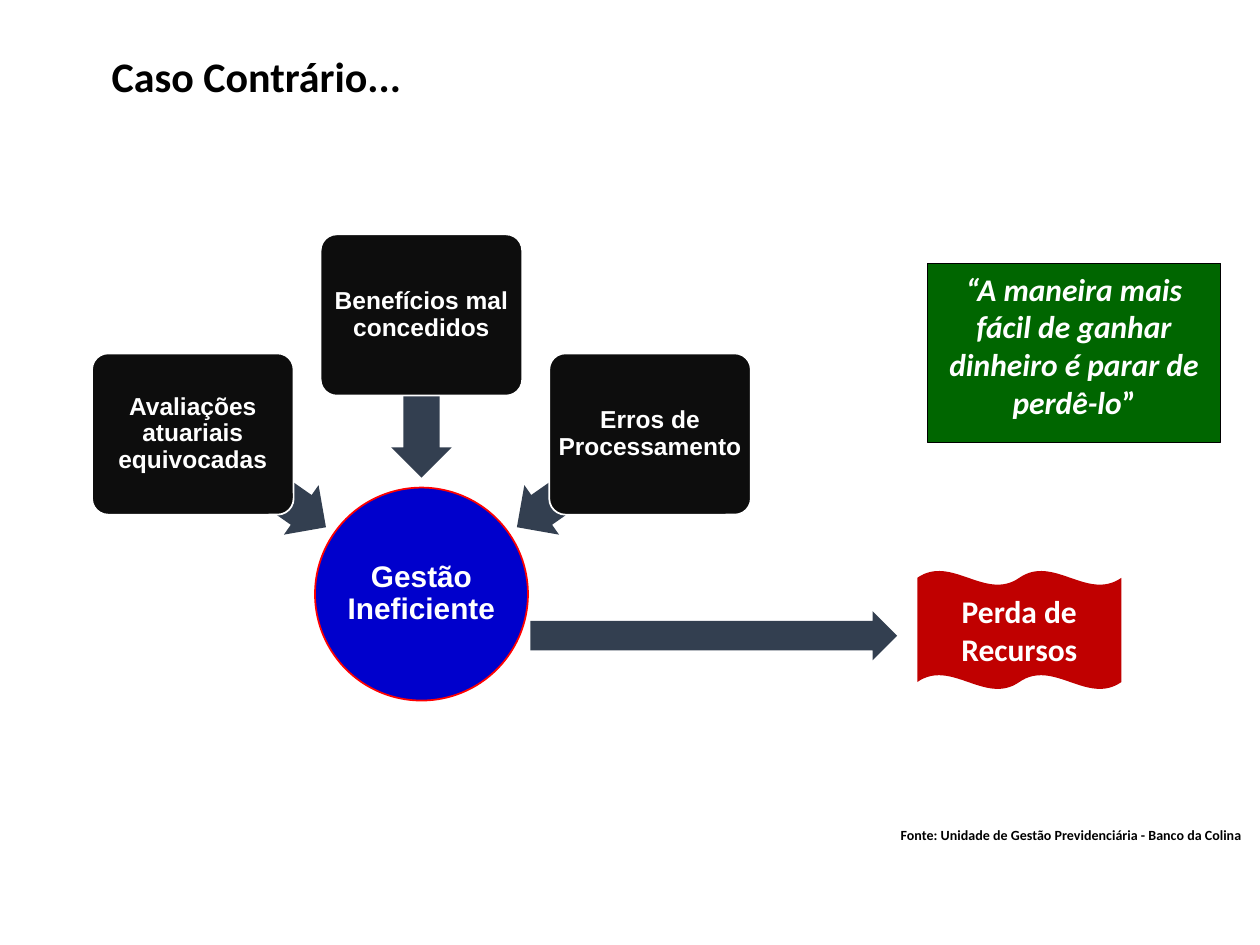
from dataclasses import dataclass
from math import cos, radians, sin

from pptx import Presentation
from pptx.dml.color import RGBColor as Rgb
from pptx.enum.shapes import MSO_SHAPE as Shape
from pptx.enum.text import MSO_ANCHOR as Anchor, PP_ALIGN as Align
from pptx.util import Inches, Pt

COLUMNS, ROWS = 100, 75
CELL = Inches(10) // COLUMNS


@dataclass(frozen=True)
class Theme:
    ink: str = "000000"
    paper: str = "FFFFFF"
    cause: str = "0D0D0D"
    arrow: str = "333F50"
    hub: str = "0000CC"
    hub_edge: str = "FF0000"
    loss: str = "C00000"
    quote: str = "006600"
    body_font: str = "Calibri"
    diagram_font: str = "Arial"
    title_size: int = 24
    callout_size: int = 18
    hub_size: int = 17
    cause_size: int = 14
    source_size: int = 8


THEME = Theme()


def cells(*counts):
    return [round(count * CELL) for count in counts]


def centred(x, y, width, height):
    return x - width / 2, y - height / 2, width, height


def around(centre, radius, angle):
    turn = radians(angle)
    return centre[0] + radius * cos(turn), centre[1] + radius * sin(turn)


def write(holder, *runs, size, color=THEME.paper, font=THEME.body_font,
          align=Align.CENTER, anchor=Anchor.MIDDLE, spacing=None,
          inset=None, italics=()):
    frame = holder.text_frame
    frame.word_wrap = True
    frame.vertical_anchor = anchor
    if inset is not None:
        frame.margin_left = frame.margin_right = Inches(inset)
        frame.margin_top = frame.margin_bottom = Inches(inset)
    paragraph = frame.paragraphs[0]
    paragraph.alignment = align
    paragraph.line_spacing = spacing
    for index, words in enumerate(runs):
        run = paragraph.add_run()
        run.text = words
        run.font.name = font
        run.font.size = Pt(size)
        run.font.bold = True
        run.font.italic = index in italics
        run.font.color.rgb = Rgb.from_string(color)


def label(slide, area, words, **style):
    box = slide.shapes.add_textbox(*cells(*area))
    write(box, words, color=THEME.ink, anchor=Anchor.TOP, **style)


def block(slide, kind, area, fill, edge=None, edge_width=1, adjust=()):
    figure = slide.shapes.add_shape(kind, *cells(*area))
    figure.shadow.inherit = False
    figure.fill.solid()
    figure.fill.fore_color.rgb = Rgb.from_string(fill)
    if edge:
        figure.line.color.rgb = Rgb.from_string(edge)
        figure.line.width = Pt(edge_width)
    else:
        figure.line.fill.background()
    for index, value in enumerate(adjust):
        figure.adjustments[index] = value
    return figure


def arrow(slide, area, angle):
    pointer = block(slide, Shape.LEFT_ARROW, area, THEME.arrow, adjust=(0.6, 0.5))
    pointer.rotation = angle


def cause(slide, hub_centre, angle, words):
    arrow(slide, centred(*around(hub_centre, 15.7, angle), 12.9, 4.8), angle)
    card = block(slide, Shape.ROUNDED_RECTANGLE,
                 centred(*around(hub_centre, 22.15, angle), 16, 12.8),
                 THEME.cause, THEME.paper, adjust=(0.1,))
    write(card, words, size=THEME.cause_size, font=THEME.diagram_font,
          spacing=0.9, inset=0.02)


def inefficiency_diagram(slide):
    hub_centre = 33.45, 47.15
    hub = block(slide, Shape.OVAL, centred(*hub_centre, 16.9, 16.9),
                THEME.hub, THEME.hub_edge)
    write(hub, "Gestão Ineficiente", size=THEME.hub_size,
          font=THEME.diagram_font, spacing=0.9, inset=0.01)
    causes = ("Avaliações atuariais equivocadas",
              "Benefícios mal concedidos",
              "Erros de Processamento")
    for step, words in enumerate(causes):
        cause(slide, hub_centre, 215 + 55 * step, words)


def consequence(slide):
    arrow(slide, (42.1, 48.5, 29.1, 3.9), 180)
    loss = block(slide, Shape.DOUBLE_WAVE, (72.8, 45.3, 16.2, 9.4),
                 THEME.loss, adjust=(0.06, 0))
    write(loss, "Perda de Recursos", size=THEME.callout_size)


def quotation(slide):
    panel = block(slide, Shape.RECTANGLE, (73.6, 20.9, 23.3, 14.2),
                  THEME.quote, THEME.ink, 0.75)
    write(panel, "“A maneira mais fácil de ganhar dinheiro é parar de perdê-lo",
          "”", size=THEME.callout_size, anchor=Anchor.TOP, italics=(0,))


def main():
    deck = Presentation()
    deck.slide_width, deck.slide_height = cells(COLUMNS, ROWS)
    slide = deck.slides.add_slide(deck.slide_layouts[6])
    label(slide, (0.1, 4, 40.5, 7.7), "Caso Contrário...",
          size=THEME.title_size, spacing=0.9)
    label(slide, (70.5, 65.1, 29.3, 2.4),
          "Fonte: Unidade de Gestão Previdenciária - Banco da Colina",
          size=THEME.source_size, align=Align.LEFT)
    inefficiency_diagram(slide)
    consequence(slide)
    quotation(slide)
    deck.save("out.pptx")


if __name__ == "__main__":
    main()
